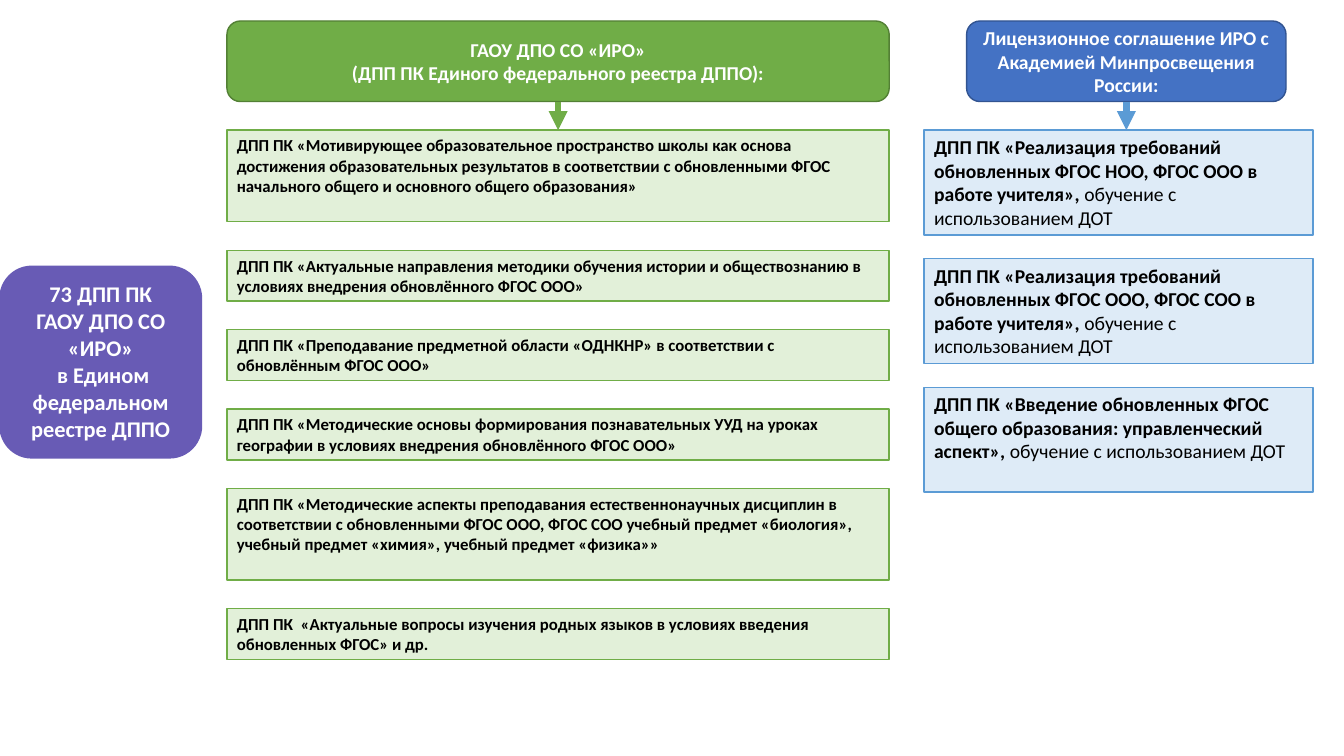
from lxml.etree import SubElement
from pptx import Presentation
from pptx.dml.color import RGBColor
from pptx.enum.shapes import MSO_CONNECTOR as Connector, MSO_SHAPE as Shape
from pptx.enum.text import MSO_ANCHOR as Anchor, PP_ALIGN as Align
from pptx.oxml.ns import qn
from pptx.util import Cm, Pt

TOP, HEADER_HEIGHT, LIST_TOP = 0.53, 2.03, 3.28
TALL, SHORT, LICENSED = 2.31, 1.28, 2.64
GREEN, PALE_GREEN, DARK_GREEN = "70AD47", "E2F0D9", "538035"
BLUE, PALE_BLUE, HEADER_BLUE, DARK_BLUE = "5B9BD5", "DEEBF7", "4472C4", "325491"
PURPLE, WHITE, BLACK = "685BB5", "FFFFFF", "000000"

REGISTRY_HEADER = ["ГАОУ ДПО СО «ИРО»", "(ДПП ПК Единого федерального реестра ДППО):"]
REGISTRY_PROGRAMS = [
    (TALL, "ДПП ПК «Мотивирующее образовательное пространство школы как основа достижения "
           "образовательных результатов в соответствии с обновленными ФГОС начального общего "
           "и основного общего образования»"),
    (SHORT, "ДПП ПК «Актуальные направления методики обучения истории и обществознанию "
            "в условиях внедрения обновлённого ФГОС ООО»"),
    (SHORT, "ДПП ПК «Преподавание предметной области «ОДНКНР» в соответствии с обновлённым "
            "ФГОС ООО»"),
    (SHORT, "ДПП ПК «Методические основы формирования познавательных УУД на уроках географии "
            "в условиях внедрения обновлённого ФГОС ООО»"),
    (TALL, "ДПП ПК «Методические аспекты преподавания естественнонаучных дисциплин "
           "в соответствии с обновленными ФГОС ООО, ФГОС СОО учебный предмет «биология», "
           "учебный предмет «химия», учебный предмет «физика»»"),
    (SHORT, "ДПП ПК  «Актуальные вопросы изучения родных языков в условиях введения "
            "обновленных ФГОС» и др."),
]
LICENSE_HEADER = ["Лицензионное соглашение ИРО с Академией Минпросвещения России:"]
LICENSE_MODE = "обучение с использованием ДОТ"
LICENSE_PROGRAMS = [
    (LICENSED, f"ДПП ПК «{title}», ", LICENSE_MODE) for title in (
        "Реализация требований обновленных ФГОС НОО, ФГОС ООО в работе учителя",
        "Реализация требований обновленных ФГОС ООО, ФГОС СОО в работе учителя",
        "Введение обновленных ФГОС общего образования: управленческий аспект",
    )
]
SUMMARY = ["73 ДПП ПК", "ГАОУ ДПО СО «ИРО»", " в Едином федеральном реестре ДППО"]


def color(hex_code):
    return RGBColor.from_string(hex_code)


def add_panel(slide, preset, box, fill, outline):
    panel = slide.shapes.add_shape(preset, *(Cm(length) for length in box))
    panel.shadow.inherit = False
    panel.fill.solid()
    panel.fill.fore_color.rgb = color(fill)
    panel.line.color.rgb = color(outline)
    panel.line.width = Pt(1)
    panel.text_frame.word_wrap = True
    return panel


def style_paragraph(paragraph, size, ink, align):
    paragraph.alignment = align
    font = paragraph.font
    font.name, font.size = "Calibri", Pt(size)
    font.color.rgb = color(ink)
    return font


def add_badge(slide, box, lines, fill, outline, size, anchor):
    """Rounded panel with centred bold white lines."""
    badge = add_panel(slide, Shape.ROUNDED_RECTANGLE, box, fill, outline)
    frame = badge.text_frame
    frame.vertical_anchor = anchor
    for number, line in enumerate(lines):
        paragraph = frame.paragraphs[0] if number == 0 else frame.add_paragraph()
        paragraph.add_run().text = line
        style_paragraph(paragraph, size, WHITE, Align.CENTER).bold = True
    return badge


def add_program(slide, box, title, mode, fill, outline, size):
    """Rectangle with a bold program title and an optional plain study mode."""
    program = add_panel(slide, Shape.RECTANGLE, box, fill, outline)
    program.text_frame.vertical_anchor = Anchor.TOP
    paragraph = program.text_frame.paragraphs[0]
    font = style_paragraph(paragraph, size, BLACK, Align.LEFT)
    title_run = paragraph.add_run()
    title_run.text = title
    if mode:
        title_run.font.bold = True
        paragraph.add_run().text = mode
    else:
        font.bold = True
    return program


def add_program_list(slide, left, width, programs, gap, fill, outline, size):
    """Stack the programs downwards and return their rectangles."""
    rectangles, top = [], LIST_TOP
    for height, title, *mode in programs:
        box = (left, top, width, height)
        rectangles.append(add_program(slide, box, title, "".join(mode), fill, outline, size))
        top += height + gap
    return rectangles


def add_arrow(slide, header, hue):
    """Thick arrow from the bottom of the header down to the list."""
    x = header.left + header.width // 2
    arrow = slide.shapes.add_connector(Connector.STRAIGHT, x, header.top + header.height,
                                       x, Cm(LIST_TOP))
    arrow.begin_connect(header, 2)
    arrow.line.color.rgb = color(hue)
    arrow.line.width = Pt(4.5)
    SubElement(arrow.line._get_or_add_ln(), qn("a:tailEnd"), type="triangle")
    SubElement(arrow._element.spPr, qn("a:effectLst"))
    return arrow


def add_registry(slide, left, width):
    header = add_badge(slide, (left, TOP, width, HEADER_HEIGHT), REGISTRY_HEADER,
                       GREEN, DARK_GREEN, 14, Anchor.MIDDLE)
    arrow = add_arrow(slide, header, GREEN)
    programs = add_program_list(slide, left, width, REGISTRY_PROGRAMS, 0.72,
                                PALE_GREEN, GREEN, 12)
    arrow.end_connect(programs[0], 0)


def add_license(slide, left, width):
    header = add_badge(slide, (left + 1.07, TOP, width - 1.75, HEADER_HEIGHT), LICENSE_HEADER,
                       HEADER_BLUE, DARK_BLUE, 14, Anchor.MIDDLE)
    add_arrow(slide, header, BLUE)
    add_program_list(slide, left, width, LICENSE_PROGRAMS, 0.6, PALE_BLUE, BLUE, 14)


def main():
    deck = Presentation()
    deck.slide_width, deck.slide_height = Cm(33.87), Cm(19.05)
    slide = deck.slides.add_slide(deck.slide_layouts[6])
    add_registry(slide, 5.72, 16.69)
    add_license(slide, 23.29, 9.8)
    add_badge(slide, (0, 6.71, 5.08, 4.83), SUMMARY, PURPLE, PURPLE, 16, Anchor.TOP)
    deck.save("out.pptx")


if __name__ == "__main__":
    main()
